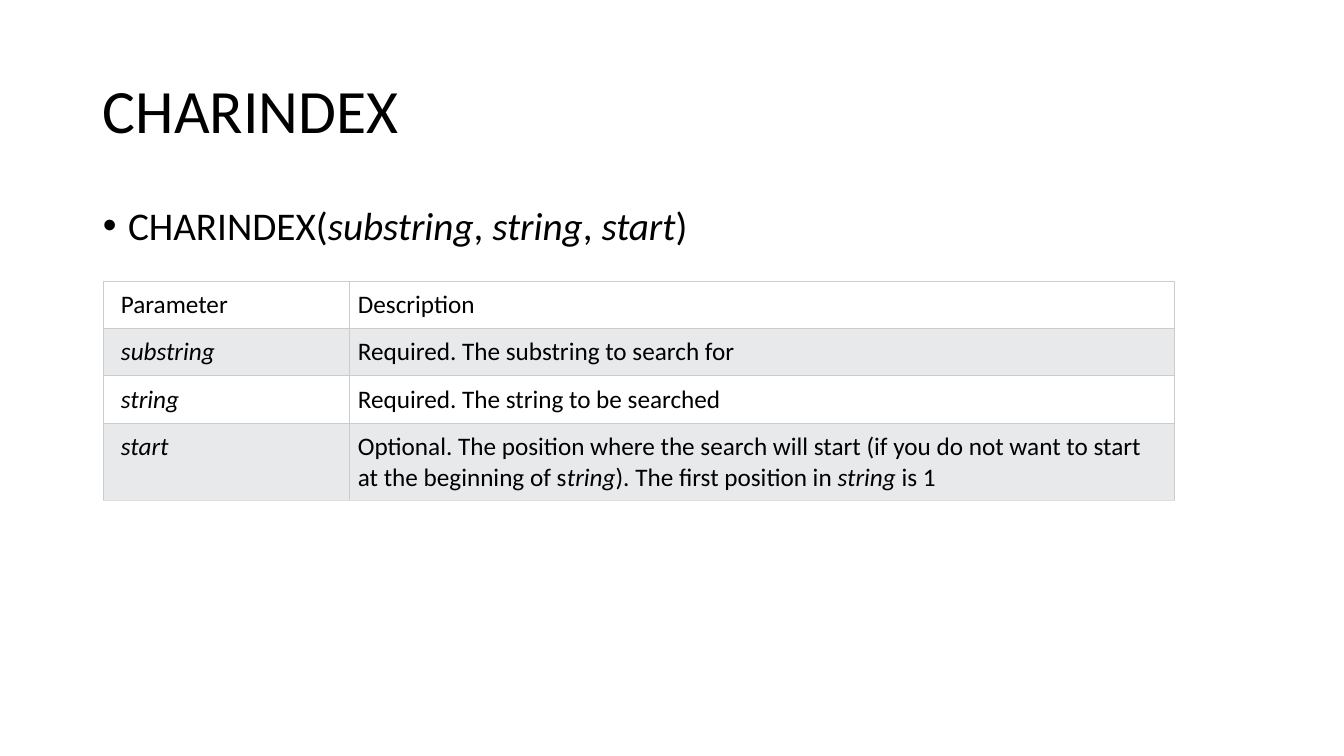
import pptx
import pptx.dml.color
import pptx.enum.text
import pptx.oxml
import pptx.oxml.ns
import pptx.util

Inches = pptx.util.Inches
Pt = pptx.util.Pt

COLORS = {"text": "000000", "plain": "FFFFFF", "band": "E7E9EB",
          "border": "CCCCCC", "bottom": "DDDDDD"}


def add_runs(para, pieces, size):
    """Add (text, italic) pieces to a paragraph, one run each."""
    for text, italic in pieces:
        span = para.add_run()
        span.text = text
        span.font.name = "Calibri"
        span.font.size = Pt(size)
        span.font.bold = False
        span.font.italic = italic
        span.font.color.rgb = pptx.dml.color.RGBColor.from_string(COLORS["text"])


def add_border(cell, side, color):
    """Draw one cell edge; side is L, R, T or B."""
    cell._tc.get_or_add_tcPr().append(pptx.oxml.parse_xml(
        f'<a:ln{side} {pptx.oxml.ns.nsdecls("a")} w="{Pt(0.75)}"><a:solidFill>'
        f'<a:srgbClr val="{color}"/></a:solidFill></a:ln{side}>'))


deck = pptx.Presentation()
deck.slide_width = Inches(13.33)
deck.slide_height = Inches(7.5)
page = deck.slides.add_slide(deck.slide_layouts[1])
for holder in page.placeholders:
    holder.left, holder.width = Inches(0.92), Inches(11.5)

# Title
title = page.shapes.title
title.top, title.height = Inches(0.4), Inches(1.45)
title.text_frame.vertical_anchor = pptx.enum.text.MSO_ANCHOR.MIDDLE
para = title.text_frame.paragraphs[0]
para.alignment = pptx.enum.text.PP_ALIGN.LEFT
para.line_spacing = 0.9
add_runs(para, [("CHARINDEX", False)], 44)

# Syntax bullet
body = page.placeholders[1]
body.top, body.height = Inches(2), Inches(4.76)
para = body.text_frame.paragraphs[0]
para.line_spacing = 0.9
para.space_before = Pt(10)
properties = para._p.get_or_add_pPr()
properties.set("marL", str(Inches(0.25)))
properties.set("indent", str(Inches(-0.25)))
properties.append(pptx.oxml.parse_xml(
    f'<a:buFont {pptx.oxml.ns.nsdecls("a")} typeface="Arial"/>'))
properties.append(pptx.oxml.parse_xml(
    f'<a:buChar {pptx.oxml.ns.nsdecls("a")} char="•"/>'))
add_runs(para, [("CHARINDEX(", False), ("substring", True), (", ", False),
                ("string", True), (", ", False), ("start", True), (")", False)], 28)

# Parameter table
rows = [
    [[("Parameter", False)], [("Description", False)]],
    [[("substring", True)], [("Required. The substring to search for", False)]],
    [[("string", True)], [("Required. The string to be searched", False)]],
    [[("start", True)],
     [("Optional. The position where the search will start (if you do not want "
       "to start at the beginning of s", False), ("tring", True),
      ("). The first position in ", False), ("string", True), (" is 1", False)]],
]
row_heights = [0.47, 0.47, 0.47, 0.77]
column_widths = [2.44, 8.18]
table = page.shapes.add_table(
    len(rows), len(column_widths), Inches(1.03), Inches(2.79),
    Inches(sum(column_widths)), Inches(sum(row_heights))).table
table.first_row = False
table.horz_banding = False
for column, width in zip(table.columns, column_widths):
    column.width = Inches(width)
for row_number, (row, height) in enumerate(zip(rows, row_heights)):
    table.rows[row_number].height = Inches(height)
    last_row = row_number == len(rows) - 1
    for column_number, pieces in enumerate(row):
        cell = table.cell(row_number, column_number)
        cell.margin_left = Inches(0.08 if column_number else 0.17)
        cell.margin_right = cell.margin_top = cell.margin_bottom = Inches(0.08)
        for side in "LRTB":
            bottom_edge = last_row and side == "B"
            add_border(cell, side, COLORS["bottom" if bottom_edge else "border"])
        cell.fill.solid()
        cell.fill.fore_color.rgb = pptx.dml.color.RGBColor.from_string(
            COLORS["band" if row_number % 2 else "plain"])
        add_runs(cell.text_frame.paragraphs[0], pieces, 18)

deck.save("out.pptx")
